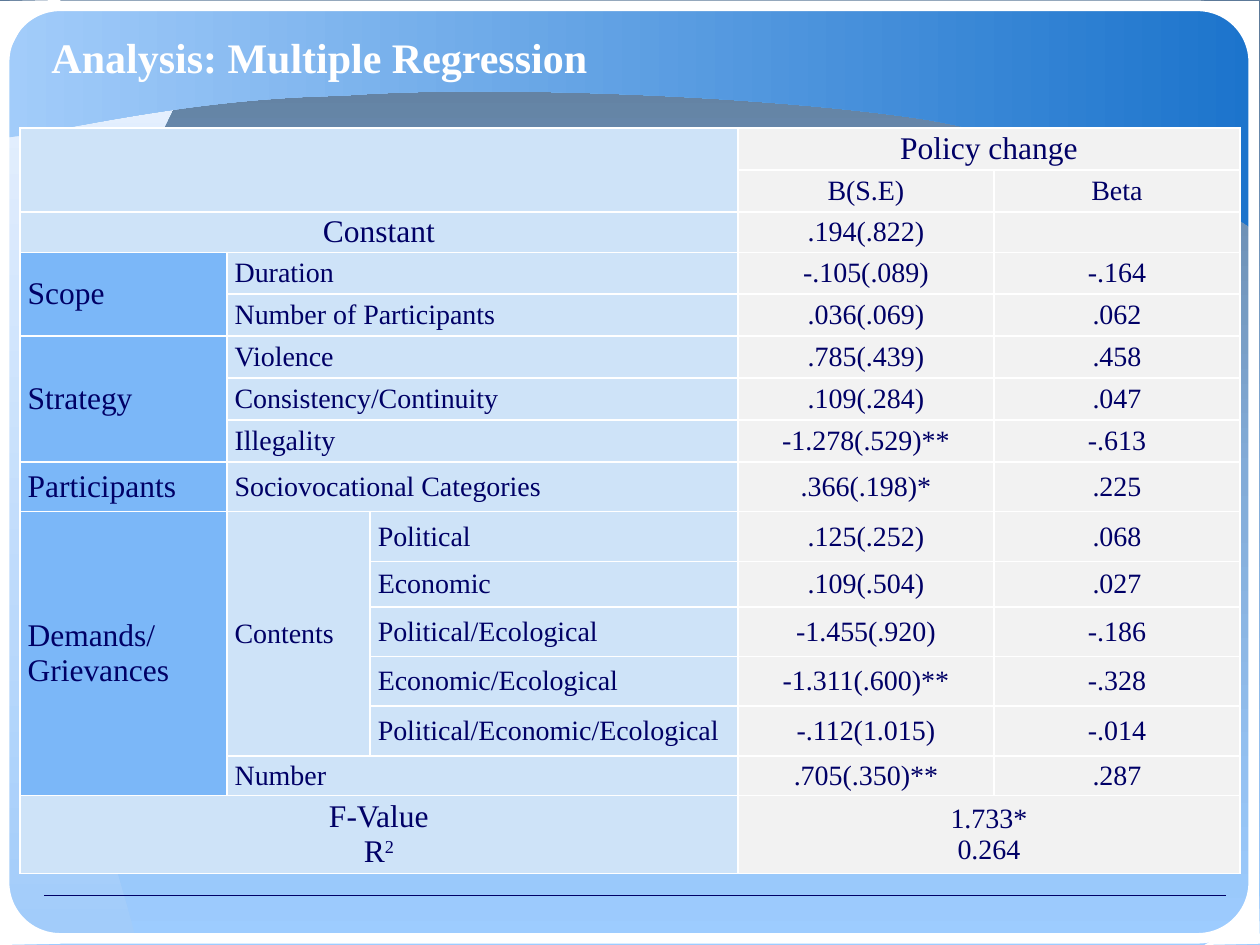
from copy import deepcopy

from lxml.etree import SubElement
from pptx import Presentation
from pptx.dml.color import RGBColor
from pptx.enum.shapes import MSO_CONNECTOR, MSO_SHAPE
from pptx.enum.text import MSO_ANCHOR, PP_ALIGN
from pptx.oxml import parse_xml
from pptx.oxml.ns import nsdecls, qn
from pptx.util import Pt

FONT = "Times New Roman"
WHITE = RGBColor(0xFF, 0xFF, 0xFF)
NAVY = RGBColor(0x00, 0x00, 0x66)
GROUP_BLUE = RGBColor(0x7B, 0xB7, 0xF8)
LABEL_BLUE = RGBColor(0xCE, 0xE3, 0xF8)
VALUE_GRAY = RGBColor(0xF2, 0xF2, 0xF2)
SKY = RGBColor(0xA2, 0xCC, 0xFA)
PALE = RGBColor(0xEA, 0xF2, 0xFE)
DEEP_BLUE = RGBColor(0x1C, 0x74, 0xCC)
BACKGROUND = [RGBColor(0x5C, 0x79, 0x98), RGBColor(0x83, 0xAC, 0xD8),
              RGBColor(0x9D, 0xCC, 0xFF)]

# Outlines in points: a pair is a corner, a six-tuple is a Bezier curve.
SIDE_WAVE = [(77, 534.2), (72, 511.2, 51.1, 456.5, 47.5, 396),
             (41, 335.5, 43.9, 236.2, 57.6, 170.6),
             (72, 108.7, 118.8, 18.7, 128.9, 12.2), (4.3, 12.2), (3.6, 534.2)]
TOP_WAVE = [(5, 78.5), (36.7, 74.9, 107.3, 56.2, 195.1, 54.7),
            (277.9, 48.2, 440.6, 54.7, 529.9, 68.4),
            (614.9, 83.5, 707, 121, 715.7, 131), (716.4, 5.8), (5, 5)]
CORNERS = [
    [(34.6, 539.3), (13.7, 529.2), (3.6, 518.4), (0, 502.6), (0, 540)],
    [(0, 39.6), (2.9, 35.3, 9.4, 18.7, 15.1, 12.2),
     (20.2, 5.8, 36, 2.9, 34.6, 0), (0, 0.7)],
    [(719.3, 504), (710.6, 522), (699.1, 533.5), (688.3, 540), (720, 539.3)],
    [(684.7, 0.7), (688.3, 2.2, 699.8, 1.4, 709.9, 12.2),
     (719.3, 23, 717.8, 43.2, 719.3, 41), (719.3, 0.7)],
]
UNITS_PER_POINT = 100

COLUMN_WIDTHS = [118.3, 81.8, 210.3, 146.3, 140.6]
ROW_HEIGHTS = [24, 24, 22.6] + [24] * 5 + [28.4, 28.4, 26] + [28.4] * 3 + [22.6, 41.2]

# row, column, rows spanned, columns spanned, text
LABELS = [
    (0, 0, 2, 3, ""), (0, 3, 1, 2, "Policy change"),
    (1, 3, 1, 1, "B(S.E)"), (1, 4, 1, 1, "Beta"),
    (2, 0, 1, 3, "Constant"),
    (3, 0, 2, 1, "Scope"), (3, 1, 1, 2, "Duration"),
    (4, 1, 1, 2, "Number of Participants"),
    (5, 0, 3, 1, "Strategy"), (5, 1, 1, 2, "Violence"),
    (6, 1, 1, 2, "Consistency/Continuity"), (7, 1, 1, 2, "Illegality"),
    (8, 0, 1, 1, "Participants"), (8, 1, 1, 2, "Sociovocational Categories"),
    (9, 0, 6, 1, "Demands/\nGrievances"), (9, 1, 5, 1, "Contents"),
    (9, 2, 1, 1, "Political"), (10, 2, 1, 1, "Economic"),
    (11, 2, 1, 1, "Political/Ecological"), (12, 2, 1, 1, "Economic/Ecological"),
    (13, 2, 1, 1, "Political/Economic/Ecological"), (14, 1, 1, 2, "Number"),
    (15, 0, 1, 3, "F-Value\nR"), (15, 3, 1, 2, "1.733*\n0.264"),
]
FIRST_RESULT_ROW = 2
RESULTS = [
    (".194(.822)", ""), ("-.105(.089)", "-.164"), (".036(.069)", ".062"),
    (".785(.439)", ".458"), (".109(.284)", ".047"), ("-1.278(.529)**", "-.613"),
    (".366(.198)*", ".225"), (".125(.252)", ".068"), (".109(.504)", ".027"),
    ("-1.455(.920)", "-.186"), ("-1.311(.600)**", "-.328"),
    ("-.112(1.015)", "-.014"), (".705(.350)**", ".287"),
]


def set_gradient(fill, parent, colors, angle):
    """Spread the colours evenly; the angle runs counter-clockwise."""
    fill.gradient()
    fill.gradient_angle = angle
    stop_list = next(parent.iter(qn("a:gsLst")))
    while len(stop_list) < len(colors):
        stop_list.append(deepcopy(stop_list[0]))
    for index, (stop, color) in enumerate(zip(fill.gradient_stops, colors)):
        stop.position = index / (len(colors) - 1)
        stop.color.rgb = color


def bend_segments(shape, segments):
    """Join each three line segments of a curve into one Bezier segment."""
    lines = iter(list(shape._element.iter(qn("a:lnTo"))))
    for segment in segments:
        first = next(lines)
        if len(segment) == 6:
            first.tag = qn("a:cubicBezTo")
            for line in (next(lines), next(lines)):
                first.append(line[0])
                line.getparent().remove(line)


def add_outline(slide, outline, colors, angle=0):
    numbers = [round(n * UNITS_PER_POINT) for segment in outline for n in segment]
    start, *points = zip(numbers[::2], numbers[1::2])
    builder = slide.shapes.build_freeform(*start, scale=Pt(1) / UNITS_PER_POINT)
    builder.add_line_segments(points, close=False)
    shape = builder.convert_to_shape()
    bend_segments(shape, outline[1:])
    shape.shadow.inherit = False
    shape.line.fill.background()
    if len(colors) > 1:
        set_gradient(shape.fill, shape._element, colors, angle)
    else:
        shape.fill.solid()
        shape.fill.fore_color.rgb = colors[0]


def add_footer_line(slide):
    line = slide.shapes.add_connector(
        MSO_CONNECTOR.STRAIGHT, Pt(25.4), Pt(511.7), Pt(700.4), Pt(511.7))
    line.line.color.rgb = NAVY
    line.line.width = Pt(0.75)
    SubElement(line._element.spPr, qn("a:effectLst"))


def add_frame(slide):
    frame = slide.shapes.add_shape(
        MSO_SHAPE.ROUNDED_RECTANGLE, Pt(2.4), Pt(3.4), Pt(714), Pt(532.8))
    frame.adjustments[0] = 0.06
    frame.shadow.inherit = False
    frame.fill.background()
    frame.line.color.rgb = WHITE
    frame.line.width = Pt(6)


def style_paragraph(paragraph, size, color, bold=False):
    font = paragraph.font
    font.name, font.size, font.bold = FONT, Pt(size), bold
    font.color.rgb = color


def add_title(slide, text):
    box = slide.shapes.add_textbox(Pt(22.3), Pt(11.2), Pt(663), Pt(42.5))
    frame = box.text_frame
    frame.word_wrap = True
    frame.vertical_anchor = MSO_ANCHOR.MIDDLE
    frame.text = text
    style_paragraph(frame.paragraphs[0], 24, WHITE, bold=True)


def add_borders(cell):
    properties = cell._tc.get_or_add_tcPr()
    for index, side in enumerate(("lnL", "lnR", "lnT", "lnB")):
        properties.insert(index, parse_xml(
            f'<a:{side} {nsdecls("a")} w="{Pt(1)}"><a:solidFill>'
            f'<a:srgbClr val="{WHITE}"/></a:solidFill></a:{side}>'))


def format_cell(cell, fill_color):
    cell.fill.solid()
    cell.fill.fore_color.rgb = fill_color
    cell.vertical_anchor = MSO_ANCHOR.MIDDLE
    cell.margin_left = cell.margin_right = Pt(4.5)
    cell.margin_top = cell.margin_bottom = Pt(0.7)
    add_borders(cell)


def write_cell(cell, text, size, centered):
    cell.text = text
    for paragraph in cell.text_frame.paragraphs:
        style_paragraph(paragraph, size, NAVY)
        paragraph.alignment = PP_ALIGN.CENTER if centered else PP_ALIGN.LEFT
        if not text:
            SubElement(paragraph._p, qn("a:endParaRPr"), sz=str(size * 100))


def add_regression_table(slide):
    table = slide.shapes.add_table(
        len(ROW_HEIGHTS), len(COLUMN_WIDTHS), Pt(11.3), Pt(73.2),
        Pt(sum(COLUMN_WIDTHS)), Pt(sum(ROW_HEIGHTS))).table
    table.first_row = table.horz_banding = False
    for column, width in zip(table.columns, COLUMN_WIDTHS):
        column.width = Pt(width)
    for row, height in zip(table.rows, ROW_HEIGHTS):
        row.height = Pt(height)
        for column, cell in enumerate(row.cells):
            format_cell(cell, VALUE_GRAY if column > 2 else LABEL_BLUE)
    for row, column, row_span, column_span, text in LABELS:
        cell = table.cell(row, column)
        if row_span * column_span > 1:
            cell.merge(table.cell(row + row_span - 1, column + column_span - 1))
        write_cell(cell, text, 18 if column == 0 or row == 0 else 16,
                   column > 2 or column_span == 3)
        if column == 0 and column_span == 1:
            cell.fill.fore_color.rgb = GROUP_BLUE
    for row, values in enumerate(RESULTS, FIRST_RESULT_ROW):
        for column, value in enumerate(values, 3):
            write_cell(table.cell(row, column), value, 16, True)
    exponent = table.cell(15, 0).text_frame.paragraphs[1].add_run()
    exponent.text = "2"
    exponent._r.get_or_add_rPr().set("baseline", "30000")


def main():
    presentation = Presentation()
    presentation.slide_width, presentation.slide_height = Pt(720), Pt(540)
    slide = presentation.slides.add_slide(presentation.slide_layouts[6])
    set_gradient(slide.background.fill, slide._element, BACKGROUND, 270)
    add_outline(slide, SIDE_WAVE, [SKY, PALE], 90)
    add_outline(slide, TOP_WAVE, [SKY, DEEP_BLUE])
    add_footer_line(slide)
    add_frame(slide)
    for corner in CORNERS:
        add_outline(slide, corner, [WHITE])
    add_title(slide, "Analysis: Multiple Regression")
    add_regression_table(slide)
    presentation.save("out.pptx")


if __name__ == "__main__":
    main()
